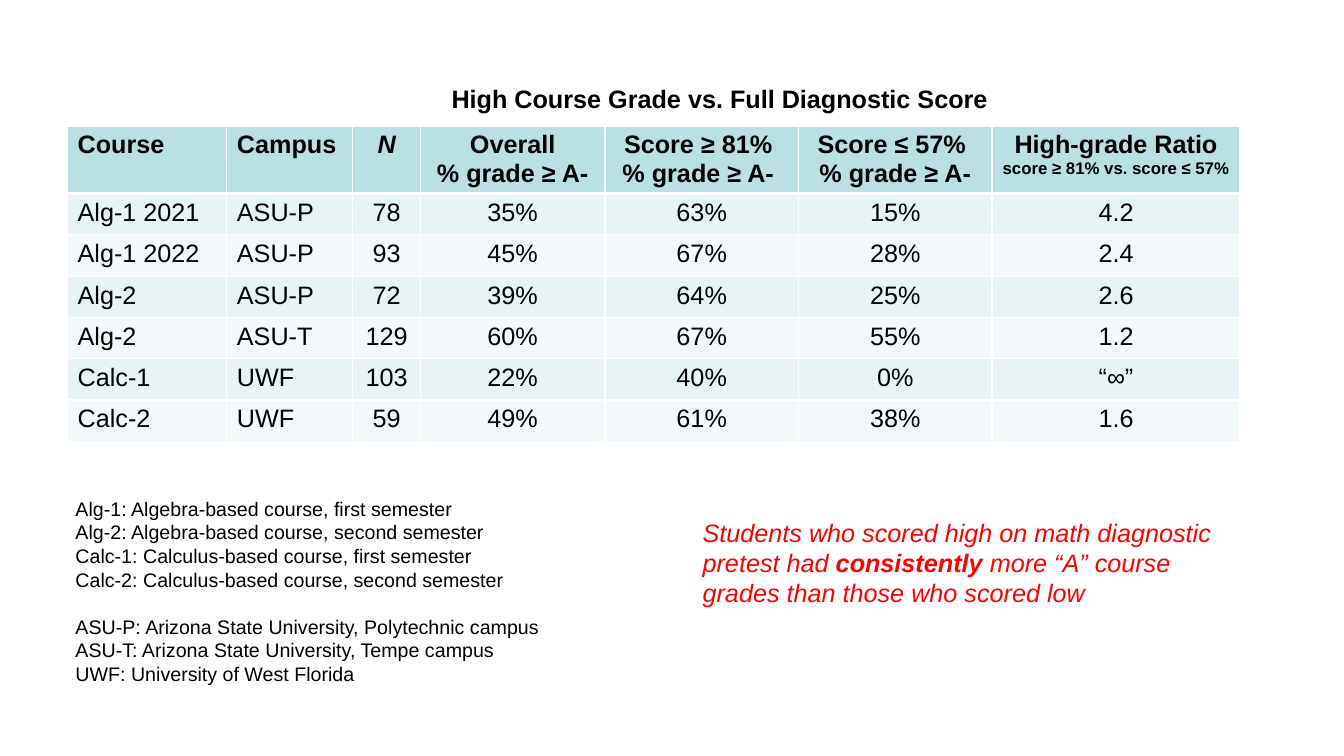
from dataclasses import dataclass

from lxml.etree import SubElement
from pptx import Presentation
from pptx.dml.color import RGBColor
from pptx.enum.text import PP_ALIGN
from pptx.oxml.ns import qn
from pptx.util import Inches, Pt


@dataclass(frozen=True)
class Theme:
    font: str = "Arial"
    text: str = "000000"
    accent: str = "FF0000"
    border: str = "FFFFFF"
    header_fill: str = "BBE0E3"
    band_fills: tuple = ("E7F3F4", "F3F9FA")
    body_size: int = 18
    legend_size: int = 14
    small_size: int = 12
    thin_border: int = 1
    thick_border: int = 3


THEME = Theme()

COLUMN_WIDTHS = (1.58, 1.25, 0.67, 1.83, 1.92, 1.92, 2.46)
HEADER_HEIGHT, ROW_HEIGHT = 0.67, 0.41
LEFT_COLUMNS = 2
HEADERS = (
    ("Course",),
    ("Campus",),
    ("N",),
    ("Overall", "% grade ≥ A-"),
    ("Score ≥ 81% ", "% grade ≥ A- "),
    ("Score ≤ 57% ", "% grade ≥ A-"),
    ("High-grade Ratio", "score ≥ 81% vs. score ≤ 57%"),
)
COURSES = (
    ("Alg-1 2021", "ASU-P", "78", "35%", "63%", "15%", "4.2"),
    ("Alg-1 2022", "ASU-P", "93", "45%", "67%", "28%", "2.4"),
    ("Alg-2", "ASU-P", "72", "39%", "64%", "25%", "2.6"),
    ("Alg-2", "ASU-T", "129", "60%", "67%", "55%", "1.2"),
    ("Calc-1", "UWF", "103", "22%", "40%", "0%", "“∞”"),
    ("Calc-2", "UWF", "59", "49%", "61%", "38%", "1.6"),
)
COURSE_LEGEND = (
    "Alg-1: Algebra-based course, first semester",
    "Alg-2: Algebra-based course, second semester",
    "Calc-1: Calculus-based course, first semester",
    "Calc-2: Calculus-based course, second semester",
)
CAMPUS_LEGEND = (
    "ASU-P: Arizona State University, Polytechnic campus",
    "ASU-T: Arizona State University, Tempe campus",
    "UWF: University of West Florida",
)
FINDING = (
    ("Students who scored high on math diagnostic pretest had ", False),
    ("consistently", True),
    (" more “A” course grades than those who scored low", False),
)


def style_font(font, size, color=THEME.text, bold=False, italic=False):
    font.name = THEME.font
    font.size = Pt(size)
    font.color.rgb = RGBColor.from_string(color)
    font.bold = bold
    font.italic = italic


def write_lines(frame, lines, size, align=PP_ALIGN.LEFT, **style):
    """Fill a text frame with one paragraph per line and return the paragraphs."""
    frame.text = "\n".join(lines)
    for para in frame.paragraphs:
        para.alignment = align
        style_font(para.font, size, **style)
    return frame.paragraphs


def add_text_frame(page, left, top, width, height):
    box = page.shapes.add_textbox(Inches(left), Inches(top), Inches(width), Inches(height))
    box.text_frame.word_wrap = True
    return box.text_frame


def set_borders(cell, top, bottom):
    """Draw the four cell borders; top and bottom widths are in points."""
    properties = cell._tc.get_or_add_tcPr()
    widths = {"lnL": THEME.thin_border, "lnR": THEME.thin_border, "lnT": top, "lnB": bottom}
    for side, width in widths.items():
        line = SubElement(properties, qn(f"a:{side}"), w=str(Pt(width)))
        fill = SubElement(line, qn("a:solidFill"))
        SubElement(fill, qn("a:srgbClr"), val=THEME.border)


def fill_cell(cell, color):
    cell.fill.solid()
    cell.fill.fore_color.rgb = RGBColor.from_string(color)


def add_grade_table(page, left, top):
    rows = (HEADERS, *(tuple((value,) for value in course) for course in COURSES))
    heights = (HEADER_HEIGHT, *(ROW_HEIGHT for _ in COURSES))
    table = page.shapes.add_table(
        len(rows), len(COLUMN_WIDTHS), Inches(left), Inches(top),
        Inches(sum(COLUMN_WIDTHS)), Inches(sum(heights)),
    ).table
    for column, width in zip(table.columns, COLUMN_WIDTHS):
        column.width = Inches(width)
    for row_index, (row, height) in enumerate(zip(rows, heights)):
        table.rows[row_index].height = Inches(height)
        is_header = row_index == 0
        fill = THEME.header_fill if is_header else THEME.band_fills[(row_index - 1) % 2]
        top_border = THEME.thick_border if row_index == 1 else THEME.thin_border
        bottom_border = THEME.thick_border if is_header else THEME.thin_border
        for column_index, lines in enumerate(row):
            cell = table.cell(row_index, column_index)
            align = PP_ALIGN.LEFT if column_index < LEFT_COLUMNS else PP_ALIGN.CENTER
            write_lines(cell.text_frame, lines, THEME.body_size, align,
                        bold=is_header, italic=lines == ("N",))
            set_borders(cell, top_border, bottom_border)
            fill_cell(cell, fill)
    ratio_header = table.cell(0, len(HEADERS) - 1).text_frame
    ratio_header.paragraphs[-1].font.size = Pt(THEME.small_size)


def add_legend(page):
    frame = add_text_frame(page, 0.65, 4.88, 6.25, 1.99)
    paragraphs = write_lines(frame, COURSE_LEGEND + CAMPUS_LEGEND, THEME.legend_size)
    paragraphs[len(COURSE_LEGEND)].space_before = Pt(17)


def add_finding(page):
    para = add_text_frame(page, 6.87, 5.08, 5.29, 1.01).paragraphs[0]
    style_font(para.font, THEME.body_size, THEME.accent, italic=True)
    for text, bold in FINDING:
        span = para.add_run()
        span.text = text
        span.font.bold = bold


def main():
    deck = Presentation()
    deck.slide_width, deck.slide_height = Inches(13.33), Inches(7.5)
    page = deck.slides.add_slide(deck.slide_layouts[6])
    add_grade_table(page, 0.67, 1.25)
    add_legend(page)
    add_finding(page)
    title = add_text_frame(page, 4.38, 0.78, 5.58, 0.4)
    write_lines(title, ("High Course Grade vs. Full Diagnostic Score",), THEME.body_size, bold=True)
    deck.save("out.pptx")


if __name__ == "__main__":
    main()
